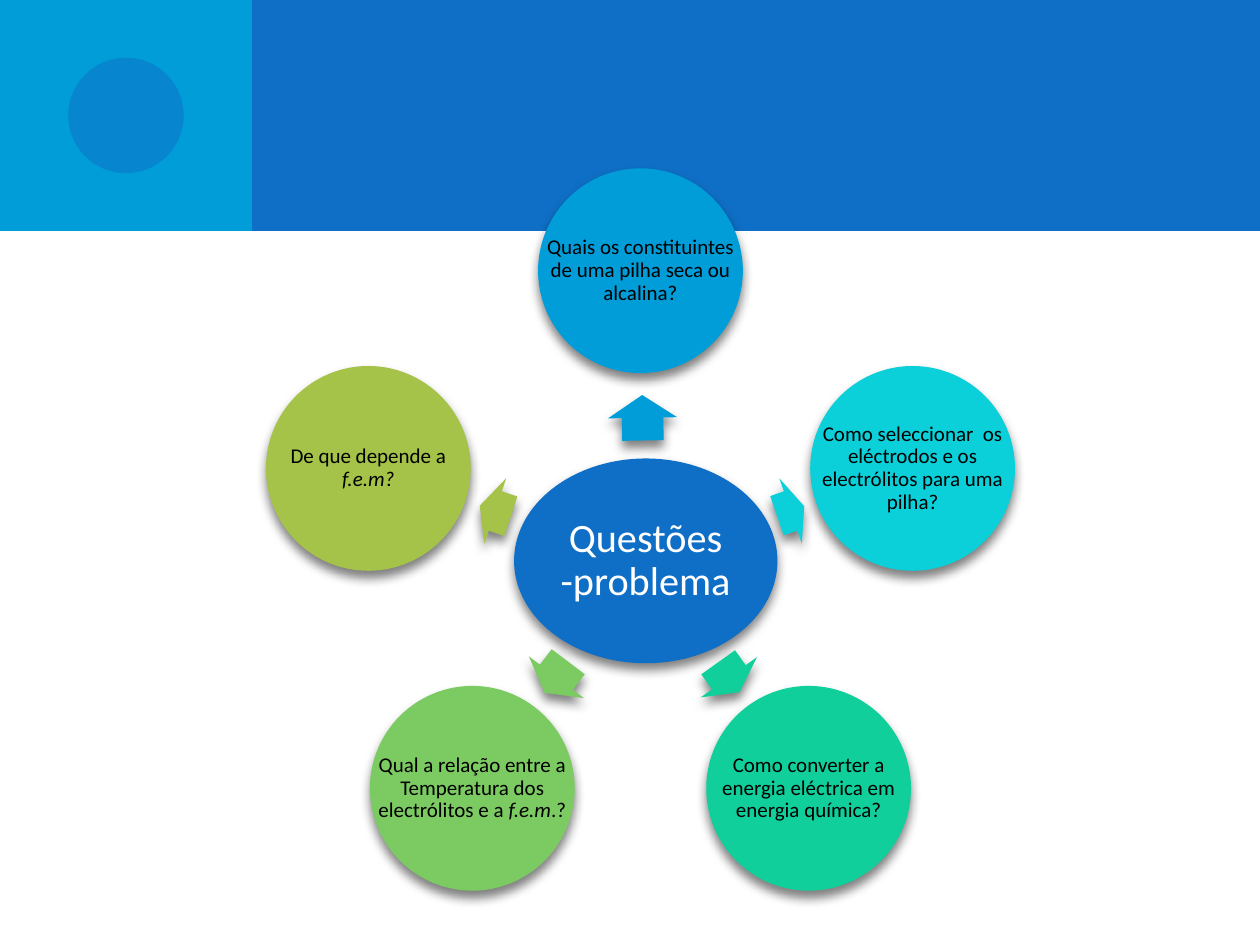
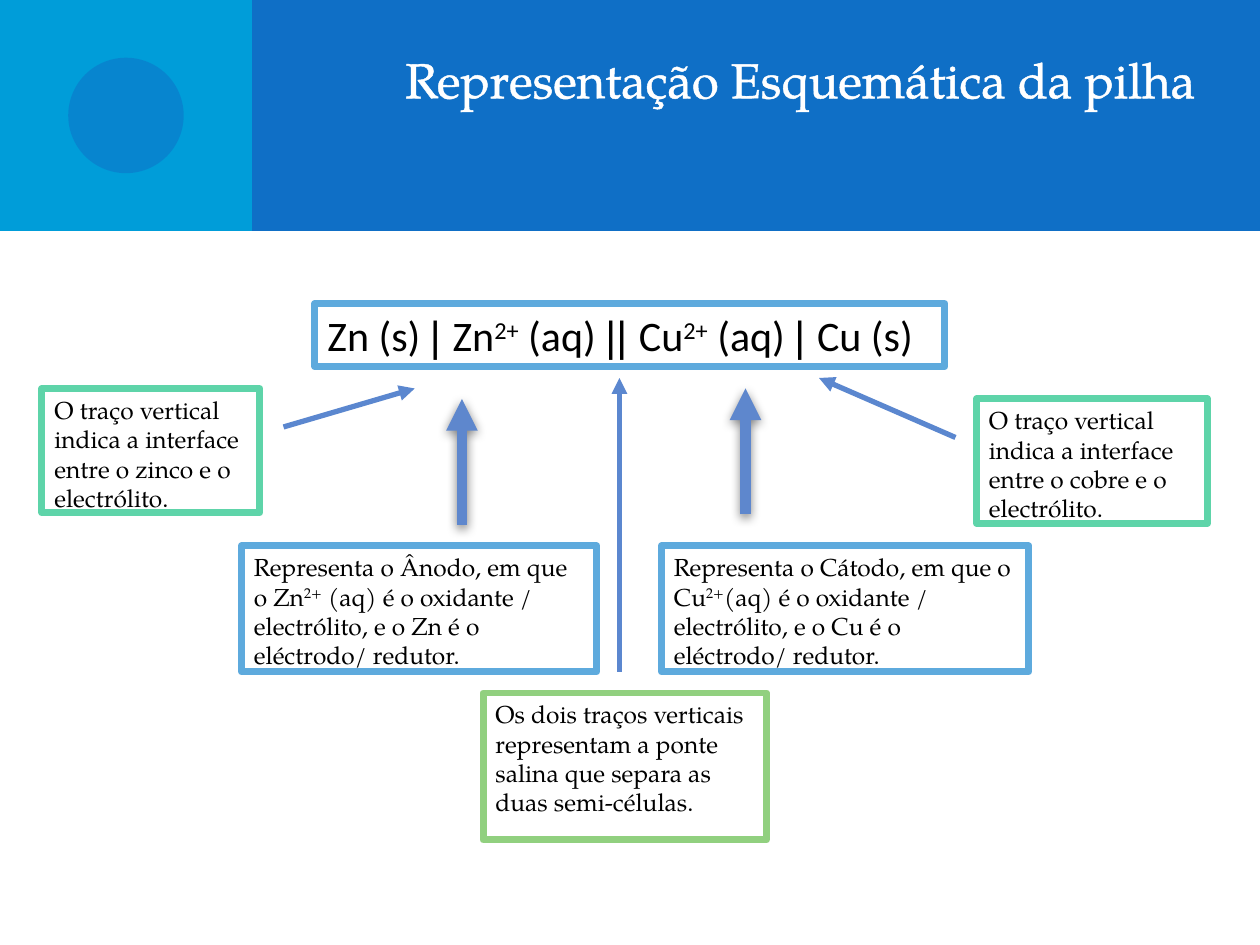
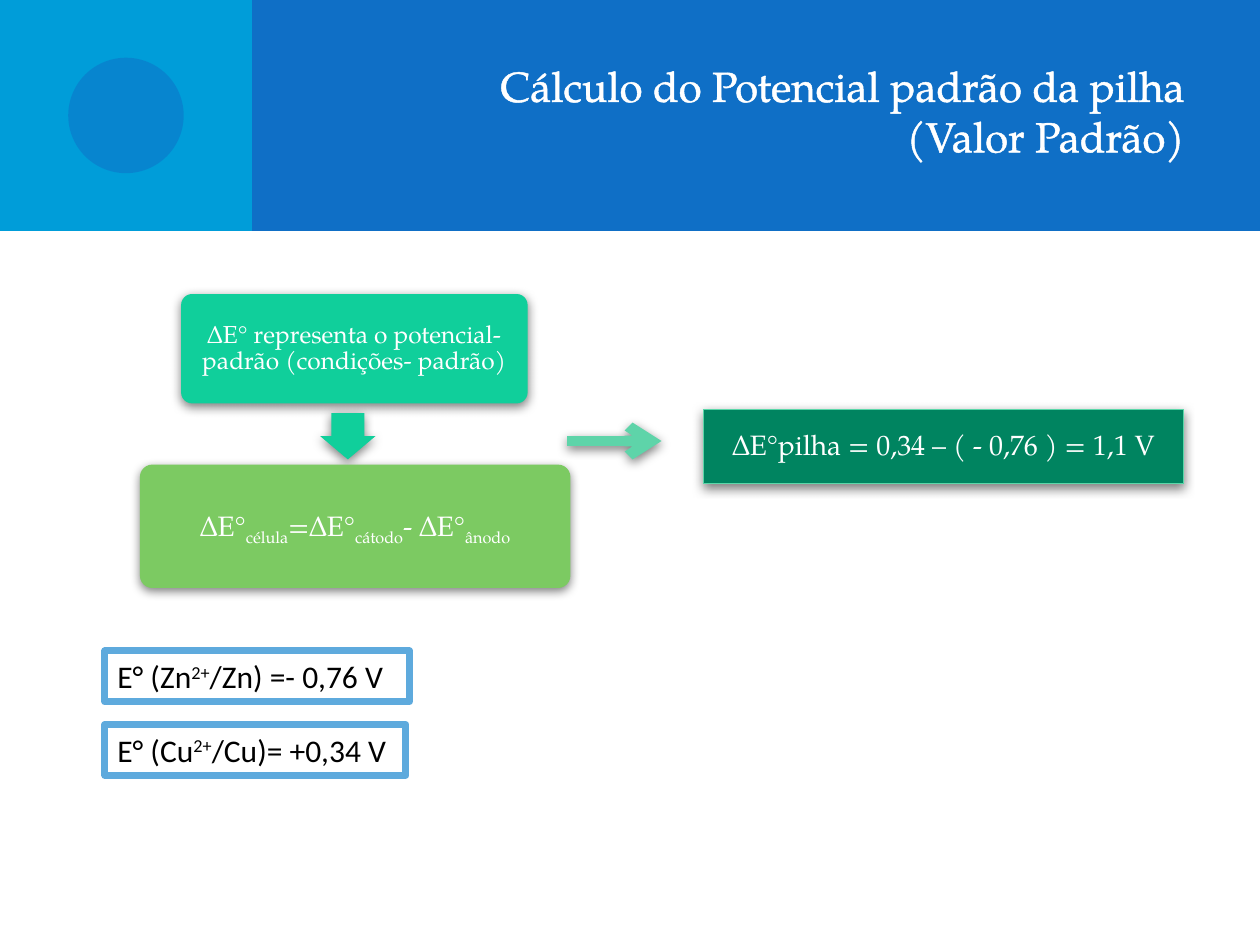
"""Builds three slides about the electrochemical cell."""
from dataclasses import dataclass
from math import cos, radians, sin
from typing import NamedTuple, Optional

from lxml.etree import SubElement
from pptx import Presentation
from pptx.dml.color import RGBColor
from pptx.enum.shapes import MSO_CONNECTOR as Link, MSO_SHAPE as Kind
from pptx.enum.text import MSO_ANCHOR as Anchor, MSO_AUTO_SIZE as Fit, PP_ALIGN as Align
from pptx.oxml.ns import qn
from pptx.util import Pt


@dataclass(frozen=True)
class Theme:
    blue: str = "0F6FC6"
    sky: str = "009DD9"
    cyan: str = "0BD0D9"
    mint: str = "10CF9B"
    green: str = "7CCA62"
    olive: str = "A5C249"
    forest: str = "008460"
    forest_edge: str = "5BD7A9"
    sky_edge: str = "5EAADD"
    mint_edge: str = "5ED4A9"
    green_edge: str = "91D07F"
    thin_arrow: str = "5B87CF"
    thick_arrow: str = "5E87CD"
    white: str = "FFFFFF"
    black: str = "000000"
    sans: str = "Calibri"
    bars: str = "Arial"
    serif: str = "TeX Gyre Pagella"
    title: float = 28
    long_title: float = 24
    hub: float = 23
    cell: float = 24
    potential: float = 18
    equation: float = 16
    note: float = 14
    question: float = 12


THEME = Theme()


class Box(NamedTuple):
    left: float
    top: float
    width: float
    height: float


class Run(NamedTuple):
    text: str
    font: Optional[str] = None
    base: int = 0
    italic: bool = False


class Style(NamedTuple):
    size: float
    font: str = THEME.serif
    color: str = THEME.black
    align: Align = Align.LEFT
    anchor: Anchor = Anchor.TOP
    inset: Optional[float] = None
    spacing: float = 1.0
    fit: Fit = Fit.NONE
    wrap: bool = True
    outline: float = 0


class Paint(NamedTuple):
    fill: str
    edge: Optional[str] = None
    weight: float = 0
    shadow: float = 0
    alpha: int = 100


class Question(NamedTuple):
    runs: list[Run]
    color: str
    arrow_x: float
    arrow_y: float
    arrow_length: float
    arrow_turn: float


class Note(NamedTuple):
    box: Box
    edge: str
    runs: list[Run]


class Arrow(NamedTuple):
    start: tuple[float, float]
    end: tuple[float, float]
    color: str = THEME.thin_arrow
    weight: float = 3
    shadow: float = 0
    head: str = "triangle"


def pts(values) -> list:
    return [Pt(value) for value in values]


def centred(x: float, y: float, width: float, height: float) -> Box:
    return Box(x - width / 2, y - height / 2, width, height)


def add_alpha(color, percent: int) -> None:
    SubElement(color, qn("a:alpha"), val=str(percent * 1000))


def add_shadow(effects, distance: float) -> None:
    shadow = SubElement(effects, qn("a:outerShdw"), blurRad=str(Pt(6)), dist=str(Pt(distance)),
                        dir="5400000", algn="ctr", rotWithShape="0")
    add_alpha(SubElement(shadow, qn("a:srgbClr"), val=THEME.black), 50)


def add_outline(properties, weight: float, color: str) -> None:
    outline = properties.makeelement(qn("a:ln"), {"w": str(Pt(weight))})
    SubElement(SubElement(outline, qn("a:solidFill")), qn("a:srgbClr"), val=color)
    properties.insert(0, outline)


def write(frame, runs: list[Run], style: Style) -> None:
    layout = {"word_wrap": style.wrap, "auto_size": style.fit, "vertical_anchor": style.anchor}
    if style.inset is not None:
        layout |= {f"margin_{side}": Pt(style.inset) for side in ("left", "top", "right", "bottom")}
    for name, value in layout.items():
        setattr(frame, name, value)
    paragraph = frame.paragraphs[0]
    for name, value in {"alignment": style.align, "line_spacing": style.spacing}.items():
        setattr(paragraph, name, value)
    for part in runs:
        if part.text == "\n":
            paragraph.add_line_break()
            continue
        run = paragraph.add_run()
        run.text = part.text
        look = {"name": part.font or style.font, "size": Pt(style.size), "italic": part.italic}
        for name, value in look.items():
            setattr(run.font, name, value)
        run.font.color.rgb = RGBColor.from_string(style.color)
        properties = run._r.get_or_add_rPr()
        if part.base:
            properties.set("baseline", str(part.base * 1000))
        if style.outline:
            add_outline(properties, style.outline, style.color)


def draw(slide, kind: Kind, box: Box, paint: Paint, adjust: tuple = (), turn: float = 0):
    shape = slide.shapes.add_shape(kind, *pts(box))
    shape.rotation = turn
    for index, value in enumerate(adjust):
        shape.adjustments[index] = value
    shape.fill.solid()
    shape.fill.fore_color.rgb = RGBColor.from_string(paint.fill)
    properties = shape.element.spPr
    if paint.alpha < 100:
        add_alpha(properties.find(qn("a:solidFill")).find(qn("a:srgbClr")), paint.alpha)
    if paint.edge:
        shape.line.color.rgb = RGBColor.from_string(paint.edge)
        shape.line.width = Pt(paint.weight)
    else:
        shape.line.fill.background()
    shape.shadow.inherit = False
    if paint.shadow:
        add_shadow(properties.find(qn("a:effectLst")), paint.shadow)
    return shape


def write_box(slide, box: Box, runs: list[Run], style: Style) -> None:
    write(slide.shapes.add_textbox(*pts(box)).text_frame, runs, style)


def draw_captioned(slide, kind: Kind, box: Box, paint: Paint, runs: list[Run], style: Style,
                   adjust: tuple = ()) -> None:
    draw(slide, kind, box, paint, adjust)
    write_box(slide, box, runs, style)


def draw_block_arrow(slide, box: Box, paint: Paint, turn: float) -> None:
    draw(slide, Kind.RIGHT_ARROW, box, paint, (0.6, 0.5), turn)


def draw_framed(slide, note: Note, style: Style) -> None:
    frame = draw(slide, Kind.RECTANGLE, note.box, Paint(THEME.white, note.edge, 4))
    write(frame.text_frame, note.runs, style)


def draw_arrow(slide, arrow: Arrow) -> None:
    link = slide.shapes.add_connector(Link.STRAIGHT, *pts(arrow.start + arrow.end))
    link.line.color.rgb = RGBColor.from_string(arrow.color)
    link.line.width = Pt(arrow.weight)
    properties = link.element.spPr
    SubElement(properties.find(qn("a:ln")), qn("a:tailEnd"), type=arrow.head)
    effects = SubElement(properties, qn("a:effectLst"))
    if arrow.shadow:
        add_shadow(effects, arrow.shadow)


def add_banded_slide(deck):
    slide = deck.slides.add_slide(deck.slide_layouts[6])
    draw(slide, Kind.RECTANGLE, Box(0, 0, 720, 132), Paint(THEME.blue))
    draw(slide, Kind.RECTANGLE, Box(0, 0, 144, 132), Paint(THEME.sky))
    draw(slide, Kind.OVAL, Box(39, 33, 66, 66), Paint(THEME.blue, alpha=50))
    return slide


def add_title(slide, box: Box, runs: list[Run], size: float) -> None:
    write_box(slide, box, runs, Style(size, color=THEME.white, align=Align.RIGHT,
                                      anchor=Anchor.MIDDLE, outline=1.45))


def caption(size: float, font: str, color: str, inset: float) -> Style:
    return Style(size, font, color, Align.CENTER, Anchor.MIDDLE, inset, 0.9)


QUESTIONS = [
    Question([Run("Quais os constituintes de uma pilha seca ou alcalina?")],
             THEME.sky, 367.2, 238.7, 26, 269),
    Question([Run("Como seleccionar  os eléctrodos e os electrólitos para uma pilha?")],
             THEME.cyan, 451.8, 292, 16.5, 341),
    Question([Run("Como converter a energia eléctrica em energia química?")],
             THEME.mint, 416.5, 387, 21, 54.4),
    Question([Run("Qual a relação entre a Temperatura dos electrólitos e a"),
              Run(" f.e.m", italic=True), Run(".?")],
             THEME.green, 317.9, 387, 22.3, 127.2),
    Question([Run("De que depende a "), Run("f.e.m?", italic=True)],
             THEME.olive, 283, 292, 18.7, 198.4),
]

CELL = Note(Box(180, 173.5, 360, 36), THEME.sky_edge, [
    Run("Zn (s) "), Run("| ", THEME.bars), Run("Zn"), Run("2+", base=30), Run(" (aq) "),
    Run("|| ", THEME.bars), Run("Cu"), Run("2+", base=30), Run(" (aq) "),
    Run("| ", THEME.bars), Run("Cu (s)")])

CELL_NOTES = [
    Note(Box(138, 312, 203, 72), THEME.sky_edge, [
        Run("Representa o Ânodo, em que o Zn"), Run("2+", base=30),
        Run(" (aq) é o oxidante / electrólito, e o Zn é o eléctrodo/ redutor.")]),
    Note(Box(276, 396, 162, 84), THEME.green_edge, [
        Run("Os dois traços verticais representam a ponte salina que separa as "
            "duas semi-células.")]),
    Note(Box(378, 312, 210, 72), THEME.sky_edge, [
        Run("Representa o Cátodo, em que o Cu"), Run("2+", base=30),
        Run("(aq) é o oxidante / electrólito, e o Cu é o eléctrodo/ redutor.")]),
    Note(Box(24, 222, 124.5, 71), THEME.mint_edge, [
        Run("O traço vertical indica a interface entre o zinco e o electrólito.")]),
    Note(Box(558, 228, 132, 71), THEME.mint_edge, [
        Run("O traço vertical indica a interface entre o cobre e o electrólito.")]),
]

CELL_ARROWS = [
    Arrow((354, 384), (354, 216)),
    Arrow((162, 244), (237, 222)),
    Arrow((546, 250), (468, 216)),
    Arrow((264, 300), (264, 228), THEME.thick_arrow, 6, 2),
    Arrow((426, 294), (426, 222), THEME.thick_arrow, 6, 2),
]

POTENTIALS = [
    Note(Box(60, 372, 174, 29), THEME.sky_edge,
         [Run("E° (Zn"), Run("2+", base=30), Run("/Zn) =- 0,76 V")]),
    Note(Box(60, 414, 172, 29), THEME.sky_edge,
         [Run("E° (Cu"), Run("2+", base=30), Run("/Cu)= +0,34 V")]),
]


def build_questions(deck) -> None:
    slide = add_banded_slide(deck)
    draw_captioned(slide, Kind.OVAL, Box(293.75, 262, 150.5, 117), Paint(THEME.blue, shadow=4),
                   [Run("Questões -problema")],
                   caption(THEME.hub, THEME.sans, THEME.white, 2))
    style = caption(THEME.question, THEME.sans, THEME.black, 1.5)
    orbit_x, orbit_y, radius, diameter = 366, 318.2, 163.5, 117
    for index, question in enumerate(QUESTIONS):
        angle = radians(index * 360 / len(QUESTIONS))
        paint = Paint(question.color, shadow=4)
        draw_block_arrow(slide, centred(question.arrow_x, question.arrow_y,
                                        question.arrow_length, 39.5),
                         paint, question.arrow_turn)
        circle = centred(orbit_x + radius * sin(angle), orbit_y - radius * cos(angle),
                         diameter, diameter)
        draw_captioned(slide, Kind.OVAL, circle, paint, question.runs, style)


def build_cell(deck) -> None:
    slide = add_banded_slide(deck)
    add_title(slide, Box(-54, 12, 744, 66), [Run("Representação Esquemática da pilha")], THEME.title)
    draw_framed(slide, CELL, Style(THEME.cell, THEME.sans, anchor=Anchor.MIDDLE,
                                   fit=Fit.SHAPE_TO_FIT_TEXT))
    for note in CELL_NOTES:
        draw_framed(slide, note, Style(THEME.note))
    for arrow in CELL_ARROWS:
        draw_arrow(slide, arrow)


def build_potential(deck) -> None:
    slide = add_banded_slide(deck)
    add_title(slide, Box(192, 18, 492, 90),
              [Run("Cálculo do Potencial padrão da pilha"), Run("\n"), Run("(Valor Padrão)")],
              THEME.long_title)
    mint = Paint(THEME.mint, shadow=2)
    draw_captioned(slide, Kind.ROUNDED_RECTANGLE, Box(103.5, 168, 198, 62.5), mint,
                   [Run("ΔE° representa o potencial-padrão (condições- padrão)")],
                   caption(THEME.note, THEME.serif, THEME.white, 4.3), (0.1,))
    draw_block_arrow(slide, Box(185.5, 233.5, 26.5, 31.5), mint, 90)
    equation = caption(THEME.equation, THEME.serif, THEME.white, 5)
    draw_captioned(slide, Kind.ROUNDED_RECTANGLE, Box(80, 265.5, 246, 70.5),
                   Paint(THEME.green, shadow=2),
                   [Run("ΔE°"), Run("célula", base=-25), Run("=ΔE°"), Run("cátodo", base=-25),
                    Run("- ΔE°"), Run("ânodo", base=-25)], equation, (0.1,))
    result = draw(slide, Kind.RECTANGLE, Box(402, 234, 274.5, 42.5),
                  Paint(THEME.forest, THEME.forest_edge, 0.75, 2))
    write(result.text_frame, [Run("∆E°pilha = 0,34 – ( - 0,76 ) = 1,1 V")], equation)
    draw_arrow(slide, Arrow((324, 252), (378, 252), THEME.mint_edge, 6, 2, "arrow"))
    for potential in POTENTIALS:
        draw_framed(slide, potential, Style(THEME.potential, THEME.sans,
                                            fit=Fit.SHAPE_TO_FIT_TEXT, wrap=False))


def main() -> None:
    deck = Presentation()
    deck.slide_width, deck.slide_height = Pt(720), Pt(540)
    for build in (build_questions, build_cell, build_potential):
        build(deck)
    deck.save("out.pptx")


if __name__ == "__main__":
    main()
